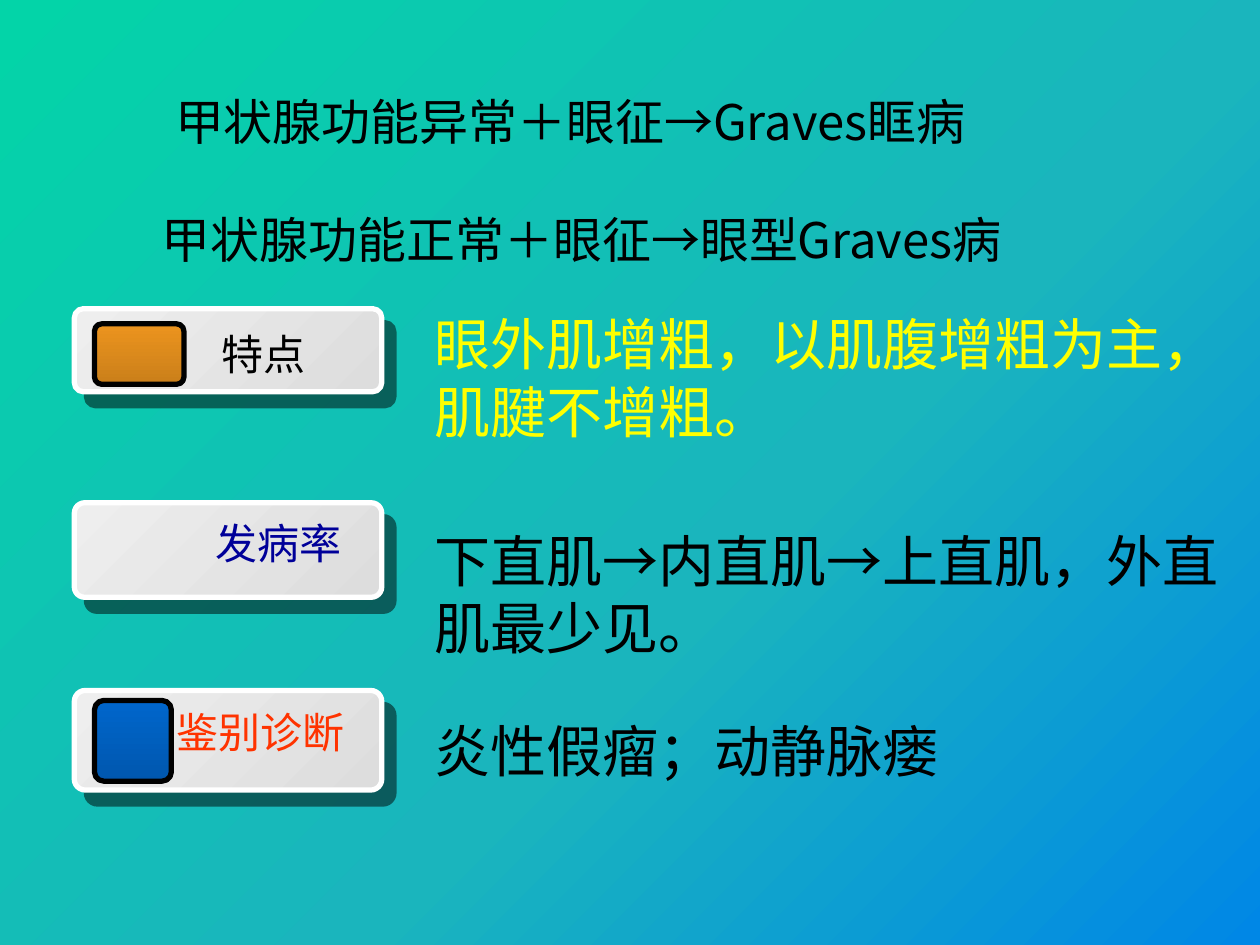
import pptx
import pptx.util
import pptx.dml.color
import pptx.enum.shapes
import pptx.enum.text
import pptx.oxml.ns
import lxml.etree

Inches = pptx.util.Inches
Pt = pptx.util.Pt
RGBColor = pptx.dml.color.RGBColor
qn = pptx.oxml.ns.qn
SubElement = lxml.etree.SubElement

BLACK = RGBColor(0x00, 0x00, 0x00)
WHITE = RGBColor(0xFF, 0xFF, 0xFF)
YELLOW = RGBColor(0xFF, 0xFF, 0x00)
RED = RGBColor(0xFF, 0x33, 0x00)
NAVY = RGBColor(0x00, 0x00, 0x99)
BACKGROUND = [
    (0, RGBColor(0x03, 0xD4, 0xA8), 100),
    (59, RGBColor(0x1A, 0xB5, 0xBD), 66),
    (100, RGBColor(0x00, 0x87, 0xE6), 100),
    (100, RGBColor(0x00, 0x5C, 0xBF), 100),
]
PANEL = [(0, RGBColor(0xEE, 0xEE, 0xEE), 100), (100, RGBColor(0xDD, 0xDD, 0xDD), 100)]
ORANGE = [(0, RGBColor(0xEC, 0x94, 0x1E), 100), (100, RGBColor(0xCA, 0x7F, 0x1A), 100)]
BLUE = [(0, RGBColor(0x00, 0x66, 0xCC), 100), (100, RGBColor(0x00, 0x57, 0xAE), 100)]
GLOSS = [(0, RGBColor(0xC9, 0xDB, 0xDB), 100), (100, RGBColor(0x00, 0x99, 0x99), 0)]

SANS = "Noto Sans CJK SC"
LATIN = "Calibri"
LABEL_LEFT = 0.59
BODY_LEFT = 3.35


def add_color(parent, color, alpha):
    clr = SubElement(parent, qn("a:srgbClr"), val=str(color))
    if alpha < 100:
        SubElement(clr, qn("a:alpha"), val=str(alpha * 1000))


def set_gradient(fill, element, stops, angle):
    fill.gradient()
    fill.gradient_angle = 360 - angle
    gs_list = next(element.iter(qn("a:gsLst")))
    for gs in list(gs_list):
        gs_list.remove(gs)
    for pos, color, alpha in stops:
        gs = SubElement(gs_list, qn("a:gs"), pos=str(pos * 1000))
        add_color(gs, color, alpha)


def add_shadow(sp):
    effects = sp.element.spPr.find(qn("a:effectLst"))
    shadow = SubElement(effects, qn("a:outerShdw"), dist=str(Pt(10.6)),
                        dir=str(49 * 60000), algn="ctr", rotWithShape="0")
    add_color(shadow, BLACK, 50)


def add_round_box(slide, left, top, width, height, adj, stops, angle, line):
    sp = slide.shapes.add_shape(
        pptx.enum.shapes.MSO_SHAPE.ROUNDED_RECTANGLE,
        Inches(left), Inches(top), Inches(width), Inches(height))
    sp.adjustments[0] = adj
    sp.shadow.inherit = False
    set_gradient(sp.fill, sp.element, stops, angle)
    sp.line.color.rgb = line
    sp.line.width = Pt(3)
    return sp


def add_panel(slide, top, height):
    add_shadow(add_round_box(slide, LABEL_LEFT, top, 2.44, height, 0.11, PANEL, 45, WHITE))


def add_icon(slide, top, width, height, stops):
    add_round_box(slide, 0.75, top, width, height, 0.12, stops, 90, BLACK)


def add_text(slide, left, top, width, height, lines, size, color, font=LATIN):
    tb = slide.shapes.add_textbox(Inches(left), Inches(top), Inches(width), Inches(height))
    tf = tb.text_frame
    tf.word_wrap = True
    tf.text = "\n".join(lines)
    for p in tf.paragraphs:
        for r in p.runs:
            r.font.size = Pt(size)
            r.font.name = font
            r.font.color.rgb = color
            SubElement(r.font._element, qn("a:ea"), typeface=SANS)
    return tf


def add_heading(slide):
    tf = add_text(slide, 0, 0.68, 9.05, 1.82,
                  ["甲状腺功能异常＋眼征→Graves眶病", "甲状腺功能正常＋眼征→眼型Graves病"],
                  28, BLACK, SANS)
    for p in tf.paragraphs:
        p.alignment = pptx.enum.text.PP_ALIGN.CENTER
    second = tf.paragraphs[1]
    second.space_before = Pt(33.6)
    second._p.get_or_add_pPr().set("marL", str(Inches(0.18)))


def bezier(points, steps=12):
    a, b, c, d = points
    for i in range(1, steps + 1):
        t = i / steps
        u = 1 - t
        yield tuple(u**3 * a[k] + 3 * u * u * t * b[k] + 3 * u * t * t * c[k] + t**3 * d[k]
                    for k in (0, 1))


def add_gloss(slide):
    start = (0.92, 4.19)
    outline = [
        *bezier([start, (0.87, 4.19), (0.82, 4.22), (0.82, 4.26)]),
        *bezier([(0.82, 4.57), (0.85, 4.58), (0.83, 4.39), (0.95, 4.3)]),
        *bezier([(0.95, 4.3), (1.07, 4.21), (1.3, 4.21), (1.29, 4.19)]),
    ]
    outline.insert(12, (0.82, 4.57))
    builder = slide.shapes.build_freeform(*start, scale=Inches(1))
    builder.add_line_segments(outline, close=True)
    sp = builder.convert_to_shape()
    sp.shadow.inherit = False
    sp.line.fill.background()
    set_gradient(sp.fill, sp.element, GLOSS, 45)


def main():
    prs = pptx.Presentation()
    prs.slide_width = Inches(10)
    prs.slide_height = Inches(7.5)
    slide = prs.slides.add_slide(prs.slide_layouts[6])
    set_gradient(slide.background.fill, slide.element, BACKGROUND, 45)

    add_heading(slide)
    add_text(slide, BODY_LEFT, 2.41, 6.93, 1.18,
             ["眼外肌增粗，以肌腹增粗为主，", "肌腱不增粗。"], 32, YELLOW, SANS)
    add_text(slide, BODY_LEFT, 4.13, 6.44, 1.18,
             ["下直肌→内直肌→上直肌，外直肌最少见。"], 32, BLACK)
    add_text(slide, BODY_LEFT, 5.64, 4.24, 0.64, ["炎性假瘤；动静脉瘘"], 32, BLACK)

    add_panel(slide, 2.45, 0.66)
    add_icon(slide, 2.57, 0.71, 0.48, ORANGE)
    add_text(slide, 1.66, 2.56, 1.37, 0.5, ["特点"], 24, BLACK)

    add_panel(slide, 5.48, 0.79)
    add_icon(slide, 5.56, 0.61, 0.64, BLUE)
    add_text(slide, 1.3, 5.56, 1.65, 0.5, ["鉴别诊断"], 24, RED)

    add_panel(slide, 3.99, 0.75)
    add_gloss(slide)
    add_text(slide, 1.61, 4.06, 1.5, 0.5, ["发病率"], 24, NAVY)

    prs.save("out.pptx")


if __name__ == "__main__":
    main()
